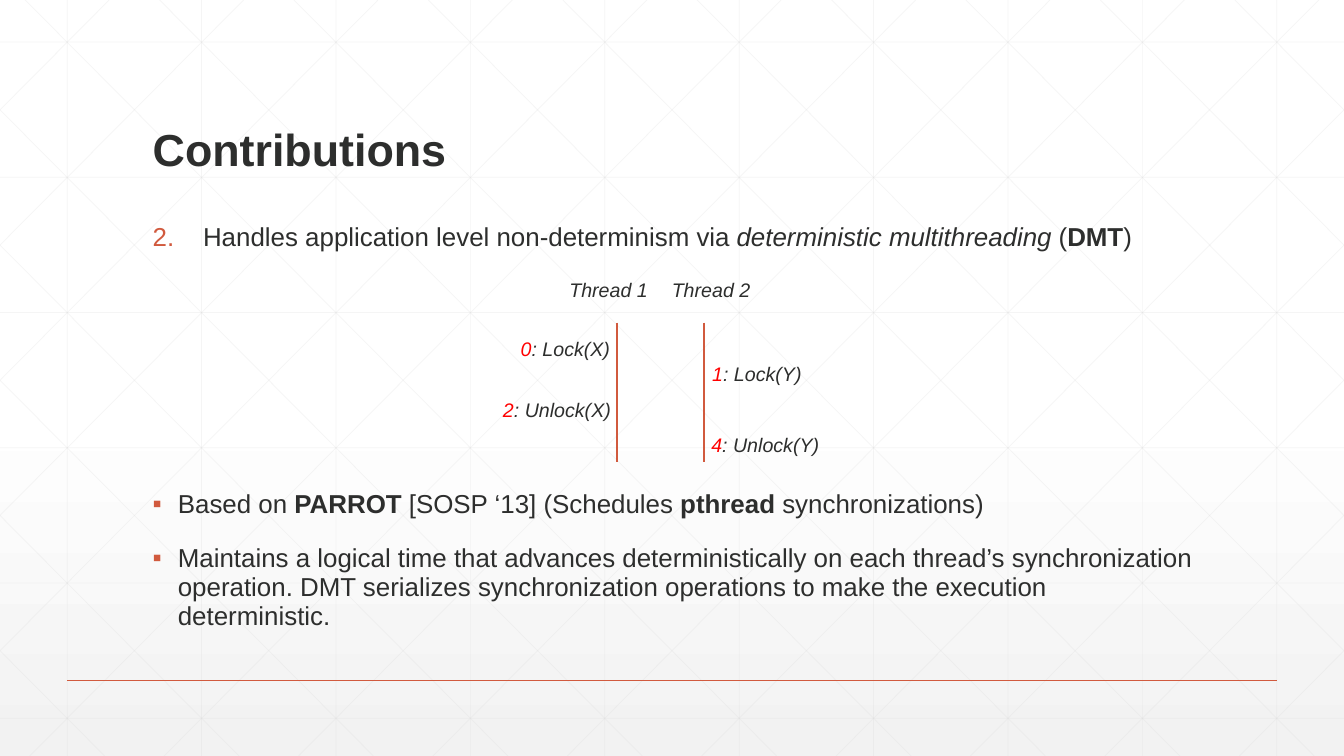
from dataclasses import dataclass

from lxml.etree import SubElement
from pptx import Presentation
from pptx.dml.color import RGBColor as RGB
from pptx.enum.shapes import MSO_CONNECTOR as Connector
from pptx.enum.text import MSO_ANCHOR as Anchor
from pptx.oxml.ns import qn
from pptx.util import Inches, Pt

COLS, ROWS = 160, 90
CELL = Inches(1 / 12)


@dataclass(frozen=True)
class Theme:
    font: str = "Arial"
    ink: str = "2D2E2D"
    accent: str = "D15A3E"
    tick: str = "FF0000"
    mesh: str = "D9D9D9"
    bg_top: str = "FFFFFF"
    bg_bottom: str = "F2F2F2"
    title: float = 32
    body: float = 18.5
    label: float = 14


def cells(*counts):
    return [round(n * CELL) for n in counts]


def add_run(p, text, *, font, size, color, bold=False, italic=False):
    r = p.add_run()
    r.text = text
    r.font.name, r.font.size = font, Pt(size)
    r.font.bold, r.font.italic = bold, italic
    r.font.color.rgb = RGB.from_string(color)


class Deck:
    def __init__(self, theme):
        self.theme = theme
        self.prs = Presentation()
        self.prs.slide_width, self.prs.slide_height = cells(COLS, ROWS)
        self.s = self.prs.slides.add_slide(self.prs.slide_layouts[6])

    def background(self):
        fill = self.s.background.fill
        fill.gradient()
        fill.gradient_angle = 270
        colors = (self.theme.bg_top, self.theme.bg_bottom)
        for stop, pos, color in zip(fill.gradient_stops, (0.53, 1), colors):
            stop.position = pos
            stop.color.rgb = RGB.from_string(color)

    def line(self, x1, y1, x2, y2, color, width, alpha=100):
        sp = self.s.shapes.add_connector(Connector.STRAIGHT, *cells(x1, y1, x2, y2))
        sp.line.width = Pt(width)
        sp.line.color.rgb = RGB.from_string(color)
        pr = sp._element.spPr
        if alpha < 100:
            SubElement(next(pr.iter(qn("a:srgbClr"))), qn("a:alpha"), val=str(alpha * 1000))
        SubElement(pr, qn("a:effectLst"))

    def text(self, box, paragraphs, size, *, anchor=Anchor.TOP, leading=1.0,
             bullet=None, indent=0.0):
        """Each paragraph is a list of (text, format) pairs."""
        tf = self.s.shapes.add_textbox(*cells(*box)).text_frame
        tf.word_wrap, tf.vertical_anchor = True, anchor
        for i, runs in enumerate(paragraphs):
            p = tf.add_paragraph() if i else tf.paragraphs[0]
            p.line_spacing = leading
            p.space_before = Pt(18 if i else 0)
            if bullet:
                self.bullet(p, bullet, indent)
            for words, fmt in runs:
                add_run(p, words, **{"font": self.theme.font, "size": size,
                                     "color": self.theme.ink, **fmt})

    def bullet(self, p, bullet, indent):
        """A whole number starts a numbered list; a string is the bullet itself."""
        pr = p._p.get_or_add_pPr()
        margin = Inches(indent)
        pr.set("marL", str(margin))
        pr.set("indent", str(-margin))
        SubElement(SubElement(pr, qn("a:buClr")), qn("a:srgbClr"), val=self.theme.accent)
        SubElement(pr, qn("a:buFont"), typeface=self.theme.font)
        if isinstance(bullet, int):
            SubElement(pr, qn("a:buAutoNum"), type="arabicPeriod", startAt=str(bullet))
        else:
            SubElement(pr, qn("a:buChar"), char=bullet)

    def mesh(self):
        """Faint square lattice crossed by diagonals in both directions."""
        pitch, run = 16, 89.46
        lines = [(x, 0, x, ROWS) for x in range(8, COLS, pitch)]
        lines += [(0, 5 + 16.1 * k, COLS, 5 + 16.1 * k) for k in range(6)]
        for k in range(-5, 10):
            top = 3 + pitch * k
            x1, x2 = max(top, 0), min(top + run, COLS)
            y1, y2 = ((x - top) * ROWS / run for x in (x1, x2))
            lines += [(x1, y1, x2, y2), (COLS - x1, y1, COLS - x2, y2)]
        for ends in lines:
            self.line(*ends, self.theme.mesh, 0.5, alpha=25)

    def label(self, x, y, width, words, tick=""):
        runs = [(tick, {"color": self.theme.tick, "italic": True})] if tick else []
        self.text((x, y, width, 4.1), [runs + [(words, {"italic": True})]],
                  self.theme.label)


def main():
    theme = Theme()
    deck = Deck(theme)
    bold, italic = {"bold": True}, {"italic": True}

    deck.background()
    deck.mesh()
    deck.line(8, 81, 152, 81, theme.accent, 1)

    deck.text((17, 6.6, 126, 15), [[("Contributions", bold)]], theme.title,
              anchor=Anchor.BOTTOM, leading=0.9)
    deck.text((17, 26, 126, 5), [[
        ("Handles application level non-determinism via ", {}),
        ("deterministic multithreading ", italic),
        ("(", {}), ("DMT", bold), (")", {}),
    ]], theme.body, leading=0.94, bullet=2, indent=0.5)
    deck.text((17, 57.7, 126, 18.3), [
        [("Based on ", {}), ("PARROT", bold), (" [SOSP ‘13] (Schedules ", {}),
         ("pthread", bold), (" synchronizations)", {})],
        [("Maintains a logical time that advances deterministically on each thread’s "
          "synchronization operation. DMT serializes synchronization operations to "
          "make the execution deterministic.", {})],
    ], theme.body, leading=0.94, bullet="▪", indent=0.25)

    for thread_x in (73.44, 83.76):
        deck.line(thread_x, 38.4, thread_x, 55, theme.accent, 1.5)
    for label in (
        (66.6, 32.5, 12, "Thread 1"),
        (78.8, 32.5, 12, "Thread 2"),
        (60.8, 39.5, 14, ": Lock(X)", "0"),
        (58.7, 46.8, 17, ": Unlock(X)", "2"),
        (83.6, 42.5, 14, ": Lock(Y)", "1"),
        (83.5, 50.9, 16.3, ": Unlock(Y)", "4"),
    ):
        deck.label(*label)

    deck.prs.save("out.pptx")


if __name__ == "__main__":
    main()
